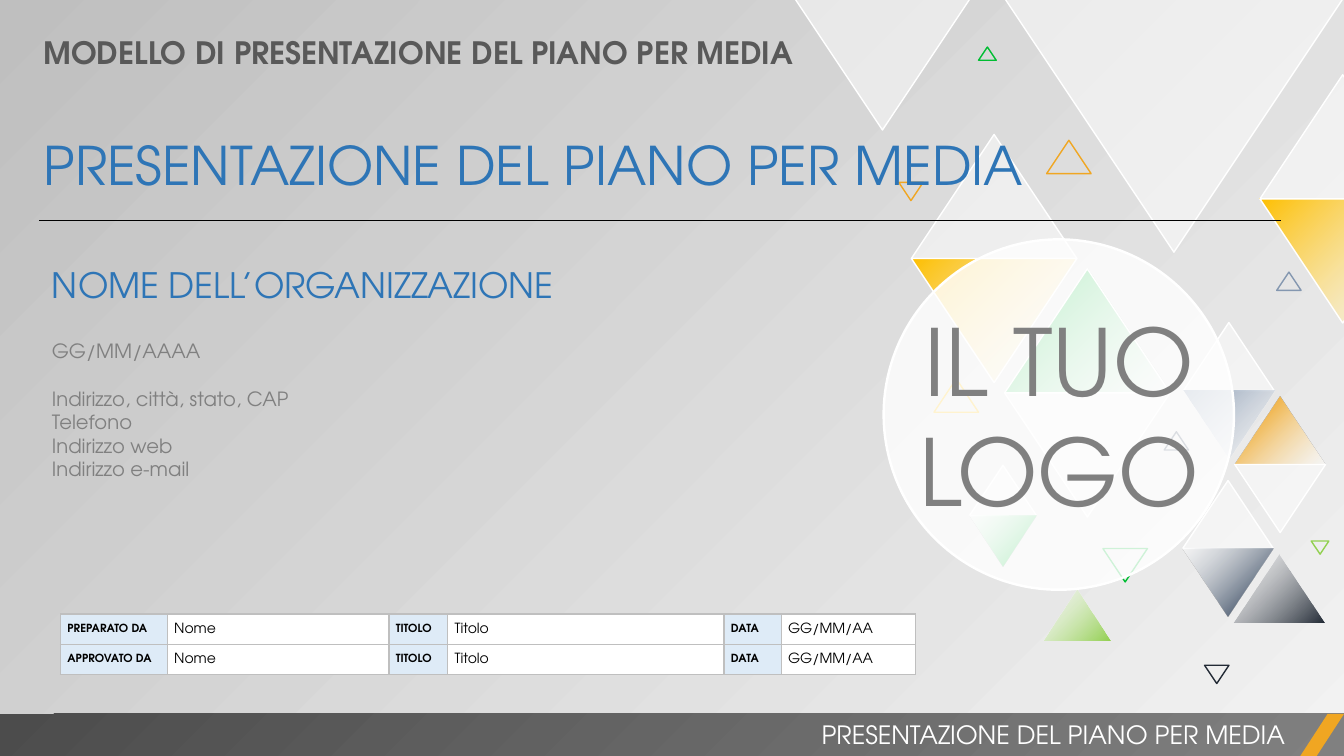
from lxml.etree import SubElement
from pptx import Presentation
from pptx.dml.color import RGBColor
from pptx.enum.shapes import MSO_CONNECTOR, MSO_SHAPE as Preset
from pptx.enum.text import MSO_ANCHOR as Anchor, MSO_AUTO_SIZE as AutoSize, PP_ALIGN as Align
from pptx.oxml.ns import qn
from pptx.util import Pt

WHITE, BLUE, GRAY, SILVER = "FFFFFF", "2E75B6", "808080", "BFBFBF"
GREEN, GOLD, ORANGE, LIME = "00BD32", "FFC000", "F0A622", "92D050"
NAVY, STEEL, INK = "44546A", "8497B0", "222A35"
VEIL = [(0, WHITE, 50)]


def rgb(value):
    return RGBColor.from_string(value)


def fade_out(color):
    return [(0, color, 100), (1, WHITE, 50)]


def fade_in(color):
    return [(0, WHITE, 50), (0.82, color, 100)]


class SlideBuilder:
    """Draws styled elements on a page measured as 160 columns by 90 rows."""

    font_name = "TeX Gyre Adventor"
    cell = Pt(6)

    def __init__(self, deck):
        deck.slide_width, deck.slide_height = self.grid(160, 90)
        self.page = deck.slides.add_slide(deck.slide_layouts[6])

    def grid(self, *lengths):
        return [round(length * self.cell) for length in lengths]

    def paint(self, fill, holder, stops, angle=135):
        if len(stops) == 1:
            fill.solid()
            fill.fore_color.rgb = rgb(stops[0][1])
        else:
            fill.gradient()
            fill.gradient_angle = angle
            for stop, (position, color, _) in zip(fill.gradient_stops, stops):
                stop.position = position
                stop.color.rgb = rgb(color)
        for tag, (_, _, alpha) in zip(list(holder.iter(qn("a:srgbClr"))), stops):
            if alpha < 100:
                SubElement(tag, qn("a:alpha"), val=str(alpha * 1000))

    def background(self, stops):
        fill = self.page.background.fill
        fill.solid()
        self.paint(fill, self.page.element.find(".//" + qn("p:bg")), stops)

    def shape(self, preset, area, stops=None, line=None, weight=1, angle=135):
        shape = self.page.shapes.add_shape(preset, *self.grid(*area))
        shape.shadow.inherit = False
        if stops:
            self.paint(shape.fill, shape.element.spPr, stops, angle)
        else:
            shape.fill.background()
        if line:
            shape.line.color.rgb = rgb(line)
            shape.line.width = Pt(weight)
        else:
            shape.line.fill.background()
        return shape

    def triangle(self, left, top, width, down=False, stops=None, line=None):
        area = (left, top, width, width * 0.75)
        shape = self.shape(Preset.ISOSCELES_TRIANGLE, area, stops, line)
        shape.rotation = 180 if down else 0

    def diamond(self, left, top, width, upper, lower):
        for down, stops in enumerate((upper, lower)):
            line = WHITE if stops is VEIL or width > 15 else None
            self.triangle(left, top + down * width * 0.75, width, down, stops, line)

    def fill_para(self, para, text, size, color, bold=False, align=Align.LEFT):
        para.text = text
        para.alignment = align
        font = para.font
        font.name, font.size, font.bold = self.font_name, Pt(size), bold
        font.color.rgb = rgb(color)

    def text(self, area, lines, **style):
        frame = self.page.shapes.add_textbox(*self.grid(*area)).text_frame
        frame.word_wrap = True
        frame.auto_size = AutoSize.SHAPE_TO_FIT_TEXT
        for index, (text, size, color, before) in enumerate(lines):
            para = frame.add_paragraph() if index else frame.paragraphs[0]
            self.fill_para(para, text, size, color, **style)
            para.space_before = Pt(before)

    def badge(self, area, words, size):
        shape = self.shape(Preset.OVAL, area, [(0, WHITE, 81)], WHITE, 1.75)
        frame = shape.text_frame
        frame.word_wrap = False
        frame.vertical_anchor = Anchor.MIDDLE
        frame.margin_left = frame.margin_right = frame.margin_top = frame.margin_bottom = 0
        for index, word in enumerate(words):
            para = frame.add_paragraph() if index else frame.paragraphs[0]
            self.fill_para(para, word, size, GRAY, align=Align.CENTER)

    def rule(self, left, right, top):
        ends = self.grid(left, top, right, top)
        line = self.page.shapes.add_connector(MSO_CONNECTOR.STRAIGHT, *ends)
        line.line.color.rgb = rgb("000000")
        line.line.width = Pt(0.5)
        SubElement(line.element.spPr, qn("a:effectLst"))

    def borders(self, cell):
        properties = cell._tc.get_or_add_tcPr()
        for index, side in enumerate(("lnL", "lnR", "lnT", "lnB")):
            edge = properties.makeelement(qn("a:" + side), {"w": str(Pt(1))})
            solid = SubElement(edge, qn("a:solidFill"))
            SubElement(solid, qn("a:srgbClr"), val=SILVER)
            properties.insert(index, edge)

    def table(self, left, top, widths, row_height, rows):
        area = self.grid(left, top, sum(widths), row_height * len(rows))
        table = self.page.shapes.add_table(len(rows), len(widths), *area).table
        table.first_row = table.horz_banding = False
        for column, width in zip(table.columns, self.grid(*widths)):
            column.width = width
        for row_index, row in enumerate(rows):
            for column_index, text in enumerate(row):
                label = column_index % 2 == 0
                cell = table.cell(row_index, column_index)
                cell.margin_left = cell.margin_right = Pt(5)
                cell.margin_top = cell.margin_bottom = 0
                cell.vertical_anchor = Anchor.MIDDLE
                cell.fill.solid()
                cell.fill.fore_color.rgb = rgb("DEEBF7" if label else WHITE)
                para = cell.text_frame.paragraphs[0]
                self.fill_para(para, text, 8 if label else 10, "000000", label)
                para.line_spacing = 1.07
                self.borders(cell)


def main():
    deck = Presentation()
    slide = SlideBuilder(deck)
    slide.background([(0, "F2F2F2", 40), (1, SILVER, 100)])

    for left, top, width, upper, lower in (
        (108.5, 16, 19.7, VEIL, fade_out(GOLD)),
        (119.6, 32, 19.7, fade_in(GREEN), VEIL),
        (140.8, 57.2, 10.8, VEIL, fade_in(NAVY)),
        (140.9, 38.4, 10.8, VEIL, fade_out(STEEL)),
        (147, 47.2, 10.8, fade_in(ORANGE), VEIL),
        (115.4, 55.4, 8, VEIL, fade_in(GREEN)),
        (150, 8.9, 19.7, VEIL, fade_out(GOLD)),
    ):
        slide.diamond(left, top, width, upper, lower)

    for left, top, width, down, stops, line in (
        (119.6, -0.2, 40.3, True, VEIL, WHITE),
        (94.6, -0.2, 20.9, True, VEIL, WHITE),
        (146.9, 66, 10.8, False, fade_out(INK), None),
        (124.2, 70.2, 8, False, fade_out(LIME), None),
        (131.3, 65.3, 5.3, True, None, GREEN),
        (111.2, 45.1, 5.3, False, None, GOLD),
        (138.6, 51.4, 2.9, False, None, NAVY),
        (143.4, 79.2, 2.9, True, None, INK),
        (107, 21.7, 2.9, True, None, ORANGE),
        (152, 32.4, 2.9, False, None, STEEL),
        (116.5, 5.6, 2.1, False, None, GREEN),
        (156.1, 64.4, 2.1, True, None, LIME),
        (124.6, 16.7, 5.3, False, None, ORANGE),
    ):
        slide.triangle(left, top, width, down, stops, line)

    title = "PRESENTAZIONE DEL PIANO PER MEDIA"
    slide.text((4, 3.4, 108.6, 5.6), [("MODELLO DI " + title, 22, "595959", 0)], bold=True)
    footer = [(0, "4C4C4C", 100), (1, GRAY, 100)]
    slide.shape(Preset.RECTANGLE, (0, 85, 160, 5), footer, angle=315)
    accent = slide.shape(Preset.PARALLELOGRAM, (154.8, 85, 5.2, 5), [(0, ORANGE, 100)])
    accent.adjustments[0] = 0.65
    slide.text((63, 85, 91.2, 4.8), [(title, 18, WHITE, 0)], align=Align.RIGHT)
    slide.text((4, 15.2, 150.6, 8.9), [(title, 38, BLUE, 0)])
    slide.text((5, 30.8, 109, 27.2), [
        ("NOME DELL’ORGANIZZAZIONE", 25, BLUE, 0),
        ("GG/MM/AAAA", 14, GRAY, 24),
        ("Indirizzo, città, stato, CAP", 14, GRAY, 17),
        ("Telefono", 14, GRAY, 0),
        ("Indirizzo web", 14, GRAY, 0),
        ("Indirizzo e-mail", 14, GRAY, 0),
    ])
    slide.rule(4.7, 152.5, 26.2)
    slide.badge((105.2, 28.5, 41.7, 41.7), ("IL TUO", "LOGO"), 66)
    slide.table(7.2, 73.1, (12.7, 26.4, 7, 32.9, 6.8, 16), 3.6, [
        (heading, "Nome", "TITOLO", "Titolo", "DATA", "GG/MM/AA")
        for heading in ("PREPARATO DA", "APPROVATO DA")
    ])
    deck.save("out.pptx")


if __name__ == "__main__":
    main()
